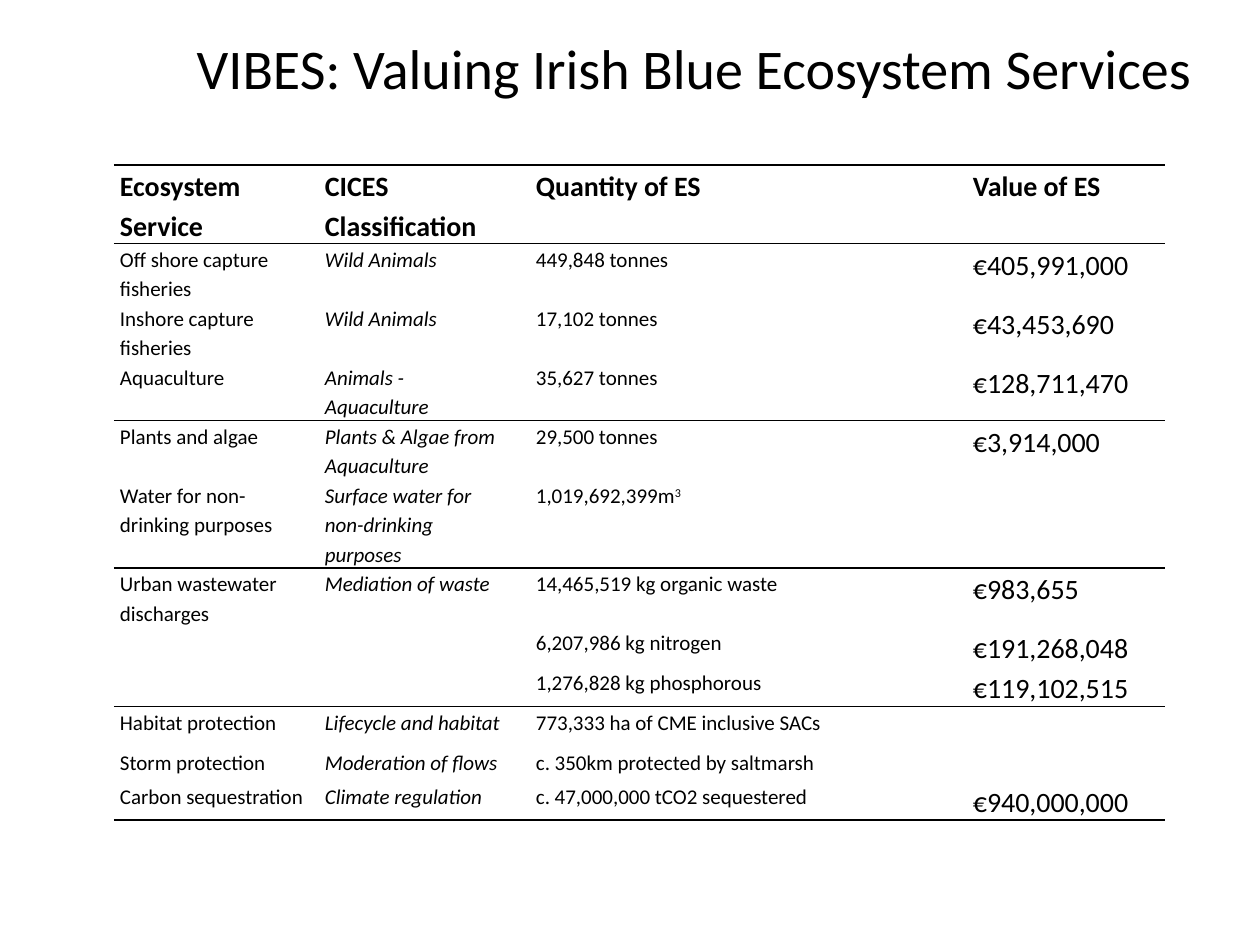
from typing import NamedTuple

from lxml import etree
from pptx import Presentation
from pptx.dml.color import RGBColor
from pptx.enum.text import MSO_ANCHOR, PP_ALIGN
from pptx.oxml.ns import qn
from pptx.util import Emu, Pt

PX = 914400 // 126
BLACK = RGBColor(0x00, 0x00, 0x00)
FONT = "Calibri"
CENTER = PP_ALIGN.CENTER
MIDDLE = MSO_ANCHOR.MIDDLE
NO_STYLE = "{2D5ABB26-0587-4C30-8999-92F81FD0307C}"
LINE_SPACING = 1.15
BODY_SIZE, LARGE_SIZE, TITLE_SIZE = 12, 16, 32

TABLE_LEFT, TABLE_TOP = 114, 165
COLUMN_WIDTHS = [205, 192, 19, 437, 198]
SERVICE, CLASSIFICATION, GAP, QUANTITY, VALUE = range(5)


class ServiceRow(NamedTuple):
    height: int
    service: str
    classification: str
    quantity: str
    value: str = ""
    superscript: str = ""
    ruled: bool = False


ROWS = [
    ServiceRow(78, "Ecosystem Service", "CICES Classification", "Quantity of ES",
               "Value of ES", ruled=True),
    ServiceRow(59, "Off shore capture fisheries", "Wild Animals", "449,848 tonnes",
               "€405,991,000"),
    ServiceRow(59, "Inshore capture fisheries", "Wild Animals", "17,102 tonnes",
               "€43,453,690"),
    ServiceRow(59, "Aquaculture", "Animals - Aquaculture", "35,627 tonnes",
               "€128,711,470", ruled=True),
    ServiceRow(59, "Plants and algae", "Plants & Algae from Aquaculture",
               "29,500 tonnes", "€3,914,000"),
    ServiceRow(88, "Water for non-drinking purposes",
               "Surface water for non-drinking purposes", "1,019,692,399m",
               superscript="3", ruled=True),
    ServiceRow(59, "Urban wastewater discharges", "Mediation of waste",
               "14,465,519 kg organic waste", "€983,655"),
    ServiceRow(39, "", "", "6,207,986 kg nitrogen", "€191,268,048"),
    ServiceRow(40, "", "", "1,276,828 kg phosphorous", "€119,102,515", ruled=True),
    ServiceRow(40, "Habitat protection", "Lifecycle and habitat",
               "773,333 ha of CME inclusive SACs"),
    ServiceRow(34, "Storm protection", "Moderation of flows",
               "c. 350km protected by saltmarsh"),
    ServiceRow(40, "Carbon sequestration", "Climate regulation",
               "c. 47,000,000 tCO2 sequestered", "€940,000,000", ruled=True),
]


def px(length: int) -> Emu:
    return Emu(length * PX)


def add_border(cell, side: str) -> None:
    properties = cell._tc.get_or_add_tcPr()
    line = etree.SubElement(properties, qn(f"a:{side}"), w=str(Pt(1)))
    fill = etree.SubElement(line, qn("a:solidFill"))
    etree.SubElement(fill, qn("a:srgbClr"), val=str(BLACK))


def format_cell(cell, top: bool, bottom: bool) -> None:
    if top:
        add_border(cell, "lnT")
    if bottom:
        add_border(cell, "lnB")
    cell.fill.background()
    cell.margin_left = cell.margin_right = px(6)
    cell.margin_top = cell.margin_bottom = 0


def write_cell(cell, text: str, superscript: str, size: int, bold: bool,
               italic: bool) -> None:
    para = cell.text_frame.paragraphs[0]
    para.line_spacing = LINE_SPACING
    if not text:
        # An empty cell keeps the row low only with a small end mark
        etree.SubElement(para._p, qn("a:endParaRPr"), sz=str(BODY_SIZE * 100))
        return
    para.add_run().text = text
    if superscript:
        span = para.add_run()
        span.text = superscript
        span.font._element.set("baseline", "30000")
    para.font.name = FONT
    para.font.size = Pt(size)
    para.font.bold = bold
    para.font.italic = italic
    para.font.color.rgb = BLACK


def add_title(page, text: str) -> None:
    title = page.shapes.title
    title.left, title.top, title.width, title.height = map(px, (144, 0, 1101, 135))
    title.text_frame.text = text
    title.text_frame.vertical_anchor = MIDDLE
    para = title.text_frame.paragraphs[0]
    para.alignment = CENTER
    para.font.name = FONT
    para.font.size = Pt(TITLE_SIZE)
    para.font.color.rgb = BLACK


def add_service_table(page, rows: list[ServiceRow]) -> None:
    frame = page.shapes.add_table(
        len(rows), len(COLUMN_WIDTHS), px(TABLE_LEFT), px(TABLE_TOP),
        px(sum(COLUMN_WIDTHS)), px(sum(row.height for row in rows)))
    table = frame.table
    table.first_row = table.horz_banding = False
    table._tbl.tblPr.find(qn("a:tableStyleId")).text = NO_STYLE
    for column, width in zip(table.columns, COLUMN_WIDTHS):
        column.width = px(width)

    for index, row in enumerate(rows):
        table.rows[index].height = px(row.height)
        header = index == 0
        texts = [row.service, row.classification, "", row.quantity, row.value]
        for column, text in enumerate(texts):
            cell = table.cell(index, column)
            format_cell(cell, top=header, bottom=row.ruled)
            write_cell(
                cell, text,
                superscript=row.superscript if column == QUANTITY else "",
                size=LARGE_SIZE if header or column == VALUE else BODY_SIZE,
                bold=header,
                italic=column == CLASSIFICATION and not header)


def main() -> None:
    deck = Presentation()
    deck.slide_width, deck.slide_height = px(1260), px(945)
    page = deck.slides.add_slide(deck.slide_layouts[5])
    add_title(page, "VIBES: Valuing Irish Blue Ecosystem Services")
    add_service_table(page, ROWS)
    deck.save("out.pptx")


if __name__ == "__main__":
    main()
